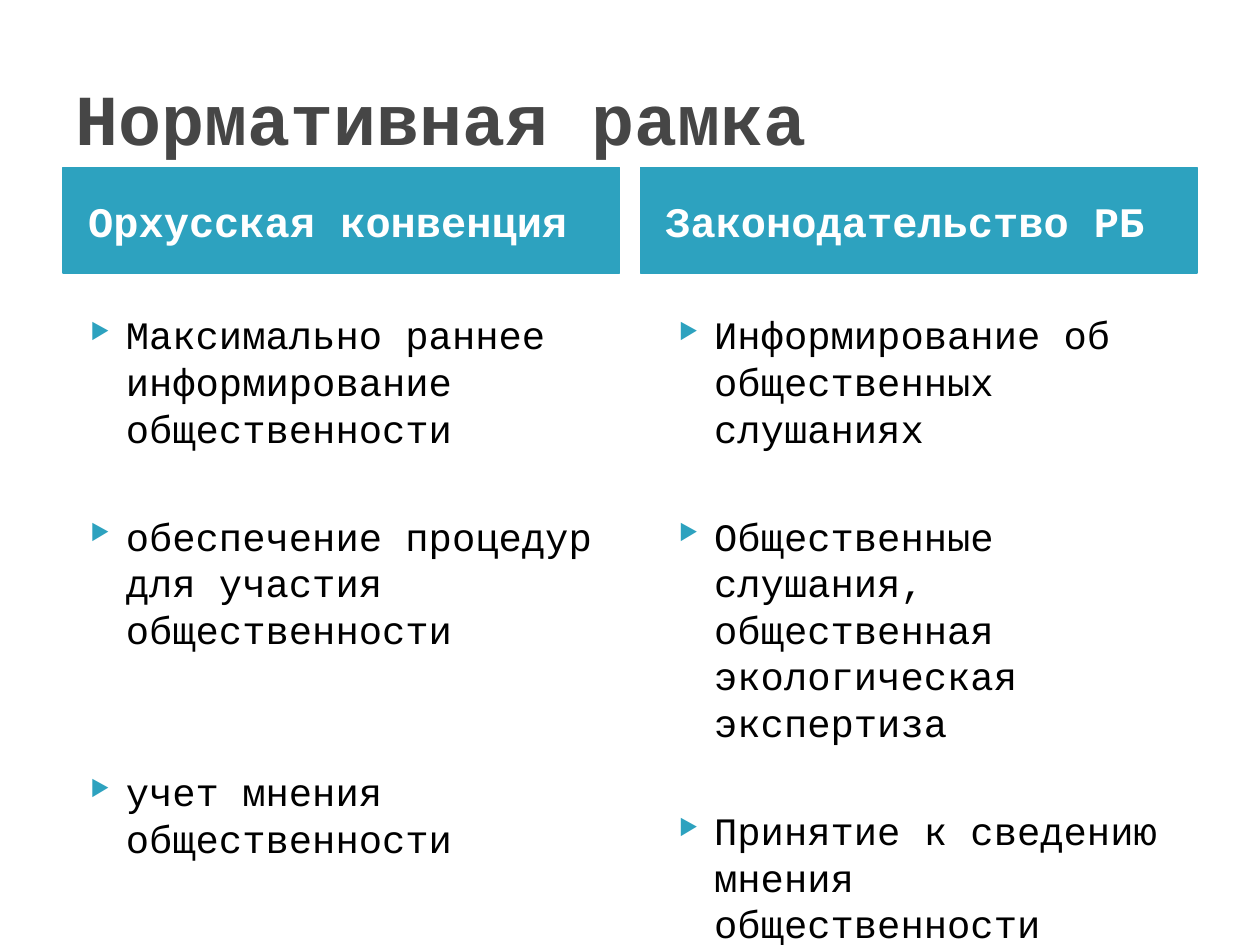
from lxml.etree import SubElement
from pptx import Presentation
from pptx.dml.color import RGBColor
from pptx.enum.shapes import MSO_SHAPE
from pptx.enum.text import MSO_ANCHOR, PP_ALIGN
from pptx.oxml.ns import qn
from pptx.util import Pt

FONT = "Courier New"
TEAL = RGBColor(0x2D, 0xA2, 0xBF)
GRAY = RGBColor(0x46, 0x46, 0x46)
WHITE = RGBColor(0xFF, 0xFF, 0xFF)
BLACK = RGBColor(0x00, 0x00, 0x00)

COL_W = 318.2
COLUMNS = [
    (36, 36, "Орхусская конвенция", [
        ("Максимально раннее информирование общественности", 0),
        ("обеспечение процедур для участия общественности", 35),
        ("учет мнения общественности", 66),
    ]),
    (365.8, 372.2, "Законодательство РБ", [
        ("Информирование об общественных слушаниях", 0),
        ("Общественные слушания, общественная экологическая экспертиза", 35),
        ("Принятие к сведению мнения общественности", 35),
    ]),
]


def add_run(p, text, size, color, bold=False):
    r = p.add_run()
    r.text = text
    r.font.name = FONT
    r.font.size = Pt(size)
    r.font.bold = bold
    r.font.color.rgb = color


def add_text_box(s, x, y, w, h):
    tf = s.shapes.add_textbox(Pt(x), Pt(y), Pt(w), Pt(h)).text_frame
    tf.word_wrap = True
    return tf


def add_title(s, text):
    tf = add_text_box(s, 36, 21.6, 648, 90)
    tf.vertical_anchor = MSO_ANCHOR.MIDDLE
    add_run(tf.paragraphs[0], text, 41, GRAY, True)


def add_header(s, x, text):
    sp = s.shapes.add_shape(MSO_SHAPE.RECTANGLE, Pt(x), Pt(95.8), Pt(COL_W), Pt(60.3))
    sp.shadow.inherit = False
    sp.fill.solid()
    sp.fill.fore_color.rgb = TEAL
    sp.line.color.rgb = TEAL
    sp.line.width = Pt(0.75)
    tf = sp.text_frame
    tf.word_wrap = True
    tf.vertical_anchor = MSO_ANCHOR.MIDDLE
    tf.margin_left = Pt(14.4)
    p = tf.paragraphs[0]
    p.alignment = PP_ALIGN.LEFT
    add_run(p, text, 24, WHITE, True)


def set_bullet(p):
    pPr = p._p.get_or_add_pPr()
    pPr.set("marL", str(Pt(28.8)))
    pPr.set("indent", str(Pt(-20.2)))
    color = SubElement(pPr, qn("a:buClr"))
    SubElement(color, qn("a:srgbClr"), val=str(TEAL))
    SubElement(pPr, qn("a:buSzPct"), val="57000")
    SubElement(pPr, qn("a:buChar"), char="▶")


def add_bullets(s, x, items):
    tf = add_text_box(s, x, 174.2, COL_W, 310.3)
    for i, (text, gap) in enumerate(items):
        p = tf.add_paragraph() if i else tf.paragraphs[0]
        set_bullet(p)
        p.space_before = Pt(gap)
        add_run(p, text, 22.2, BLACK)


def main():
    prs = Presentation()
    prs.slide_width, prs.slide_height = Pt(720), Pt(540)
    s = prs.slides.add_slide(prs.slide_layouts[6])
    add_title(s, "Нормативная рамка")
    for header_x, list_x, header, items in COLUMNS:
        add_header(s, header_x, header)
        add_bullets(s, list_x, items)
    prs.save("out.pptx")


if __name__ == "__main__":
    main()
